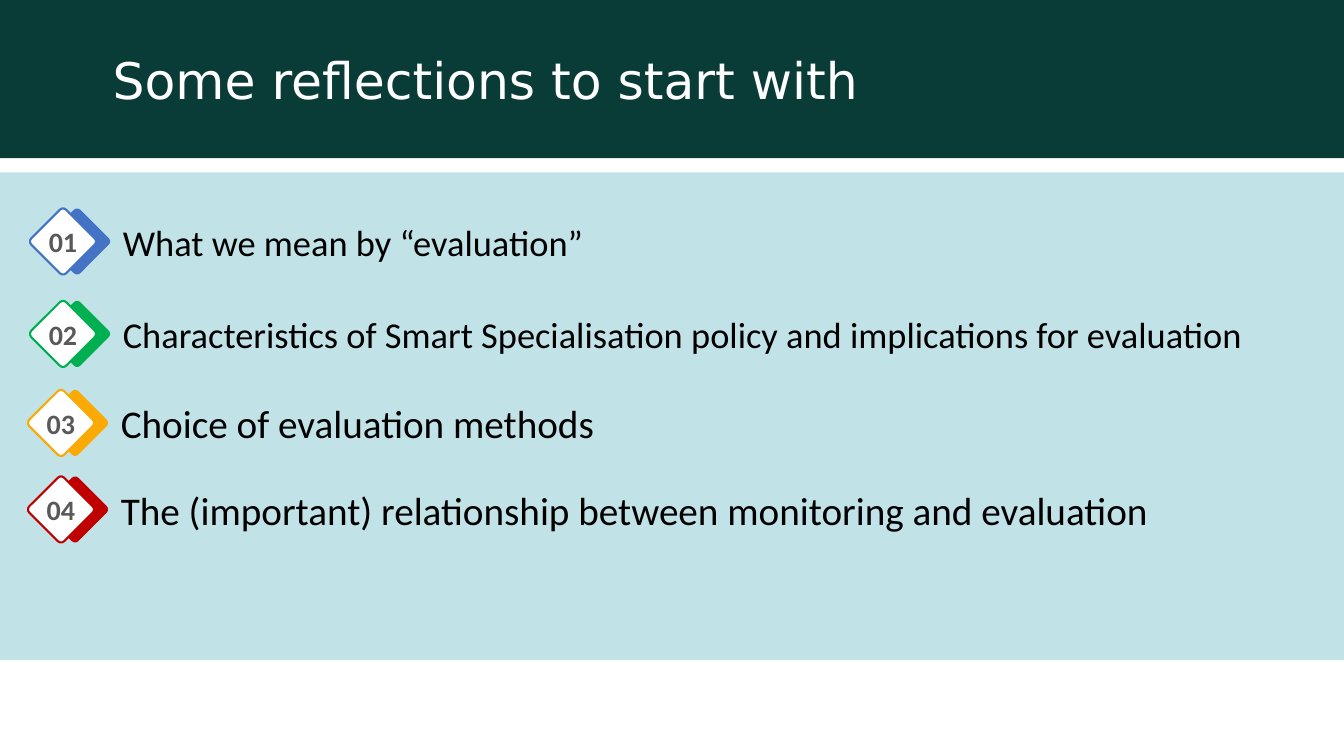
from collections import namedtuple

from pptx import Presentation
from pptx.dml.color import RGBColor
from pptx.enum.shapes import MSO_SHAPE
from pptx.enum.text import MSO_ANCHOR, PP_ALIGN
from pptx.util import Inches, Pt

# Square grid of 160 columns by 90 rows
COLUMNS, ROWS = 160, 90
CELL = Inches(7.5) / ROWS

Box = namedtuple("Box", "left top width height")

# Left edge, middle row, accent colour, text size, wording
TOPICS = [
    (4.56, 28.75, "4472C4", 26, "What we mean by “evaluation”"),
    (4.56, 39.75, "00B050", 26,
     "Characteristics of Smart Specialisation policy and implications for evaluation"),
    (4.32, 50.35, "FBA905", 28, "Choice of evaluation methods"),
    (4.32, 60.65, "C00000", 28,
     "The (important) relationship between monitoring and evaluation"),
]
TOPIC_HEIGHT = 8
TILE = 5.88


def color(value):
    return RGBColor.from_string(value)


def place(box):
    return [round(length * CELL) for length in box]


def add_block(page, box, fill, line=None, kind=MSO_SHAPE.RECTANGLE):
    block = page.shapes.add_shape(kind, *place(box))
    block.shadow.inherit = False
    block.fill.solid()
    block.fill.fore_color.rgb = color(fill)
    if line:
        block.line.color.rgb = color(line)
        block.line.width = Pt(1.5)
    else:
        block.line.fill.background()
    return block


def add_text(page, box, text, size, ink="000000", font="Calibri", bold=False,
             align=PP_ALIGN.LEFT, anchor=MSO_ANCHOR.MIDDLE, spacing=1.0):
    frame = page.shapes.add_textbox(*place(box)).text_frame
    frame.word_wrap = True
    frame.vertical_anchor = anchor
    para = frame.paragraphs[0]
    para.alignment = align
    para.line_spacing = spacing
    span = para.add_run()
    span.text = text
    span.font.size = Pt(size)
    span.font.name = font
    span.font.bold = bold
    span.font.color.rgb = color(ink)


def add_header(page, box, title):
    add_block(page, box, "093B37")
    title_box = Box(box.left + 12.24, box.top + 6.12, 143.04, 13.08)
    add_text(page, title_box, title, 36, ink="FFFFFF", font="DejaVu Sans",
             anchor=MSO_ANCHOR.TOP, spacing=0.9)


def add_tile(page, box, fill, line=None):
    tile = add_block(page, box, fill, line, MSO_SHAPE.ROUNDED_RECTANGLE)
    tile.adjustments[0] = 0.09
    tile.rotation = 45


def add_topic(page, box, number, accent, size, text):
    # Two overlapping diamonds, centred on the row
    front = Box(box.left, box.top + (box.height - TILE) / 2, TILE, TILE)
    add_tile(page, front._replace(left=box.left + 1.68), accent)
    add_tile(page, front, "FFFFFF", accent)

    # Number and wording
    number_box = Box(box.left - 0.3, box.top, TILE + 0.6, box.height)
    add_text(page, number_box, f"{number:02d}", 20, ink="595959", bold=True,
             align=PP_ALIGN.CENTER)
    text_box = Box(box.left + 8.88, box.top, box.width - 8.88, box.height)
    add_text(page, text_box, text, size)


def add_topics(page, box):
    add_block(page, box, "C1E3E8")
    for number, (left, middle, accent, size, text) in enumerate(TOPICS, 1):
        row = Box(left, middle - TOPIC_HEIGHT / 2, 153.5, TOPIC_HEIGHT)
        add_topic(page, row, number, accent, size, text)


def main():
    deck = Presentation()
    deck.slide_width = round(COLUMNS * CELL)
    deck.slide_height = round(ROWS * CELL)
    page = deck.slides.add_slide(deck.slide_layouts[6])
    add_header(page, Box(0, 0, COLUMNS, 18.84), "Some reflections to start with")
    add_topics(page, Box(0, 20.52, COLUMNS, 58.08))
    deck.save("out.pptx")


if __name__ == "__main__":
    main()
